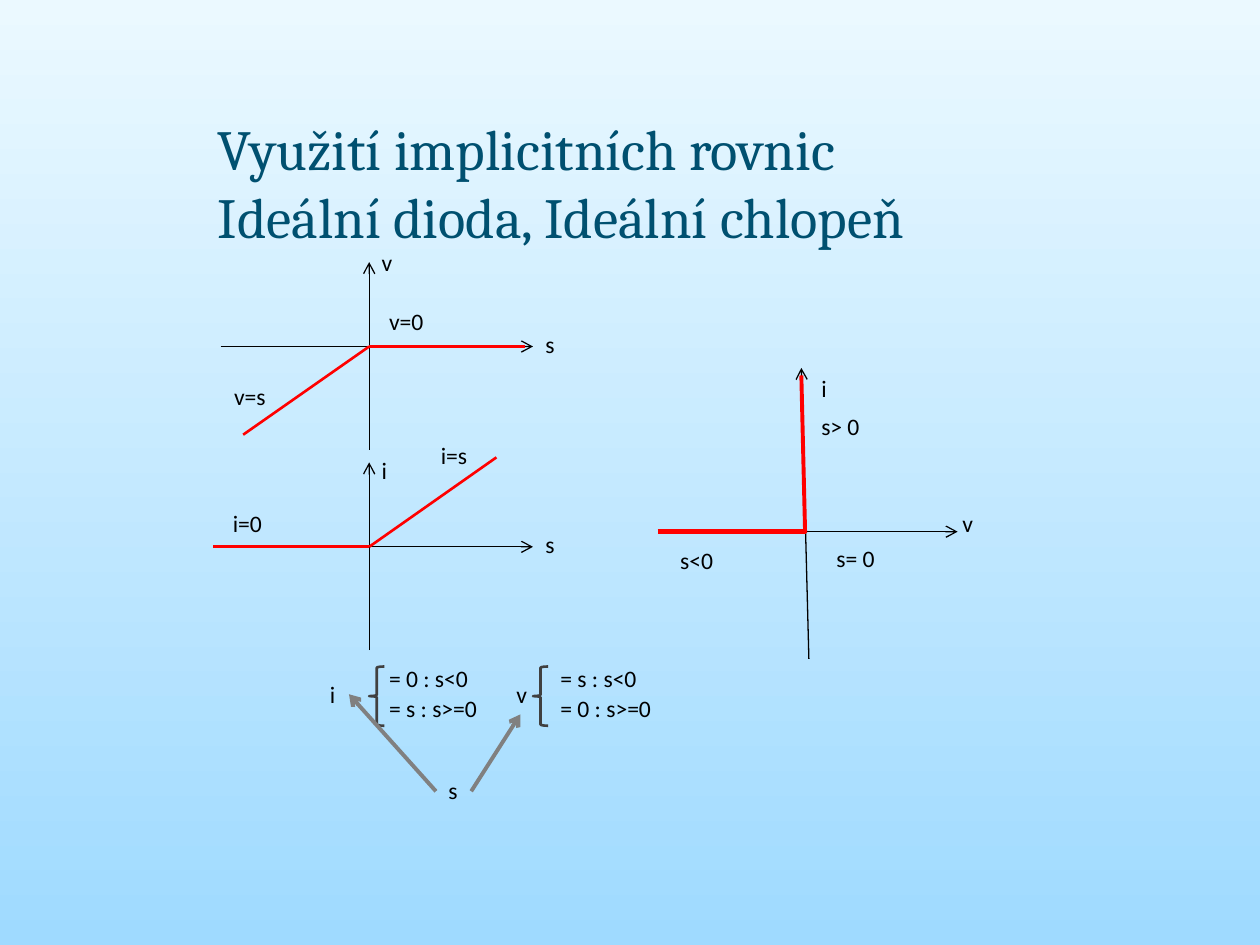
from lxml import etree
from pptx import Presentation
from pptx.dml.color import RGBColor
from pptx.enum.shapes import MSO_CONNECTOR as Connector, MSO_SHAPE as Shape
from pptx.enum.text import MSO_ANCHOR as Anchor
from pptx.oxml.ns import qn
from pptx.util import Inches, Pt

BLACK, RED, GRAY, DARK = "000000", "FF0000", "808080", "404040"


def color(value):
    return RGBColor.from_string(value)


def add_run(paragraph, text, font, size, fill):
    run = paragraph.add_run()
    run.text = text
    run.font.name = font
    run.font.size = Pt(size)
    run.font.color.rgb = color(fill)


def add_label(slide, text, left, top, width):
    box = slide.shapes.add_textbox(Inches(left), Inches(top), Inches(width), Inches(0.33))
    box.text_frame.word_wrap = True
    add_run(box.text_frame.paragraphs[0], text, "Calibri", 13.5, BLACK)


def add_line(slide, start, end, stroke, weight, arrow=False):
    points = [Inches(value) for value in (*start, *end)]
    line = slide.shapes.add_connector(Connector.STRAIGHT, *points)
    line.line.color.rgb = color(stroke)
    line.line.width = Pt(weight)
    properties = line._element.spPr
    if arrow:
        outline = properties.find(qn("a:ln"))
        etree.SubElement(outline, qn("a:tailEnd"), type="arrow")
    etree.SubElement(properties, qn("a:effectLst"))


def paint_background(slide):
    fill = slide.background.fill
    fill.gradient()
    fill.gradient_angle = 270
    for stop, value, position in zip(fill.gradient_stops, ("EBF9FF", "9FDAFF"), (0, 1)):
        stop.color.rgb = color(value)
        stop.position = position


def draw_title(slide, left, top, width, height):
    box = slide.shapes.add_textbox(Inches(left), Inches(top), Inches(width), Inches(height))
    frame = box.text_frame
    frame.word_wrap = True
    frame.vertical_anchor = Anchor.MIDDLE
    paragraph = frame.paragraphs[0]
    add_run(paragraph, "Využití implicitních rovnic", "Cambria", 32.4, "005070")
    paragraph.add_line_break()
    add_run(paragraph, "Ideální dioda, Ideální chlopeň", "Cambria", 32.4, "005070")


def draw_plot(slide, x, y, axes, branches, labels):
    for lines, stroke in ((axes, BLACK), (branches, RED)):
        for start_x, start_y, end_x, end_y, weight in lines:
            add_line(slide, (x + start_x, y + start_y), (x + end_x, y + end_y),
                     stroke, weight, arrow=stroke == BLACK)
    for text, left, top, width in labels:
        add_label(slide, text, x + left, y + top, width)


def draw_system(slide, name, cases, left, top, name_offset, case_offset, width):
    add_label(slide, name, left + name_offset, top + 0.06, 0.26)
    brace = slide.shapes.add_shape(Shape.LEFT_BRACE, Inches(left), Inches(top),
                                   Inches(0.12), Inches(0.47))
    brace.shadow.inherit = False
    brace.fill.background()
    brace.line.color.rgb = color(DARK)
    brace.line.width = Pt(1.5)
    for row, case in enumerate(cases):
        add_label(slide, case, left + case_offset, top - 0.07 + 0.24 * row, width)


def draw_parameter(slide, left, top):
    add_label(slide, "s", left, top, 0.28)
    add_line(slide, (left, top + 0.17), (left - 0.69, top - 0.6), GRAY, 2.25, arrow=True)
    add_line(slide, (left + 0.28, top + 0.17), (left + 0.67, top - 0.44), GRAY, 2.25, arrow=True)


def main():
    presentation = Presentation()
    presentation.slide_width = Inches(10)
    presentation.slide_height = Inches(7.5)
    slide = presentation.slides.add_slide(presentation.slide_layouts[6])
    paint_background(slide)

    diode_axes = [(-1.18, 0, 1.3, 0, 0.75), (0, 0.82, 0, -0.67, 0.75)]
    horizontal_label = ("s", 1.3, -0.18, 0.28)
    draw_plot(slide, 6.4, 4.22,
              [(0.02, 1.01, -0.04, -1.3, 0.75), (-1.16, 0, 1.2, 0, 0.75)],
              [(-1.18, 0, 0, 0, 3), (-0.01, 0.01, -0.04, -1.24, 2.25)],
              [("i", 0.02, -1.3, 0.41), ("v", 1.14, -0.23, 0.41),
               ("s<0", -1.1, 0.06, 1.24), ("s> 0", 0.02, -1, 1.24),
               ("s= 0", 0.14, 0.05, 1.24)])
    draw_system(slide, "v", ("= s : s<0", "= 0 : s>=0"), 4.23, 5.29, -0.23, 0.12, 1.54)
    draw_system(slide, "i", ("= 0 : s<0", "= s : s>=0"), 2.93, 5.29, -0.41, 0.06, 1)
    draw_parameter(slide, 3.46, 6.11)
    draw_plot(slide, 2.93, 2.75, diode_axes,
              [(1.24, 0, 0, 0, 1.5), (0, 0, -1, 0.7, 1.5)],
              [horizontal_label, ("v", 0, -0.83, 0.29),
               ("v=s", -1.17, 0.23, 0.5), ("v=0", 0.06, -0.36, 0.5)])
    draw_plot(slide, 2.93, 4.34, diode_axes,
              [(1.01, -0.71, 0, 0, 1.5), (0, 0, -1.24, 0, 1.5)],
              [horizontal_label, ("i", 0, -0.77, 0.25),
               ("i=0", -1.18, -0.35, 0.5), ("i=s", 0.47, -0.89, 0.5)])
    draw_title(slide, 1.63, 1.03, 6.74, 0.83)
    presentation.save("out.pptx")


if __name__ == "__main__":
    main()
